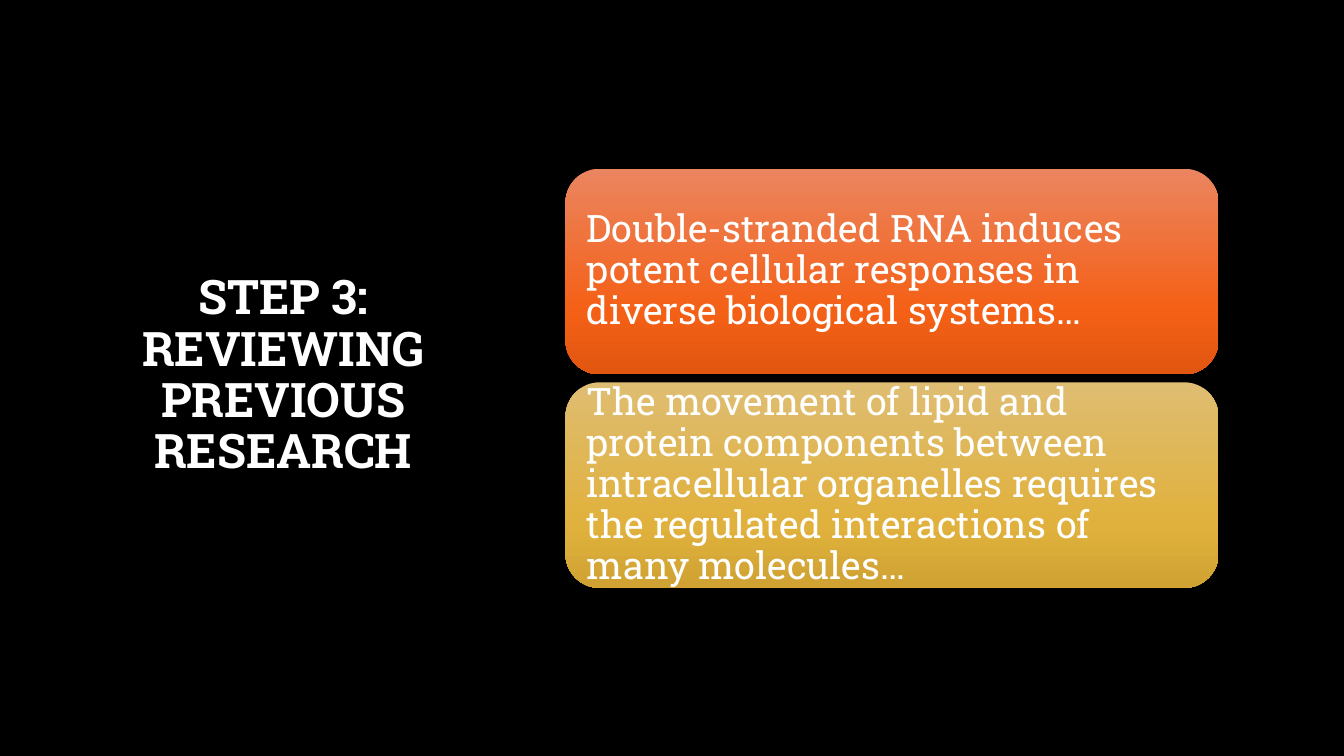
"""Build the Step 3 slide: a title beside two gradient cards of earlier research."""
from copy import deepcopy

from pptx import Presentation
from pptx.dml.color import RGBColor
from pptx.enum.shapes import MSO_SHAPE
from pptx.enum.text import MSO_ANCHOR, PP_ALIGN
from pptx.util import Pt

BLACK = RGBColor(0x00, 0x00, 0x00)
WHITE = RGBColor(0xFF, 0xFF, 0xFF)
ORANGES = [RGBColor(0xEB, 0x85, 0x60), RGBColor(0xF4, 0x60, 0x16), RGBColor(0xE1, 0x56, 0x10)]
GOLDS = [RGBColor(0xDF, 0xBD, 0x72), RGBColor(0xE0, 0xB1, 0x3C), RGBColor(0xCF, 0xA2, 0x33)]
STOPS = [0, 0.69, 1]

CARDS = [
    ("Double-stranded RNA induces potent cellular responses in diverse biological systems…", ORANGES),
    ("The movement of lipid and protein components between intracellular organelles "
     "requires the regulated interactions of many molecules…", GOLDS),
]
CARD_LEFT, CARD_TOP, CARD_WIDTH, CARD_HEIGHT, CARD_GAP = 403.9, 120.5, 466.5, 146.9, 5.7


def write_text(sp, text, size, bold=False, align=PP_ALIGN.LEFT, inset=7.2):
    tf = sp.text_frame
    tf.word_wrap = True
    tf.vertical_anchor = MSO_ANCHOR.MIDDLE
    tf.margin_left = tf.margin_right = tf.margin_top = tf.margin_bottom = Pt(inset)
    p = tf.paragraphs[0]
    p.alignment = align
    p.line_spacing = 0.9
    r = p.add_run()
    r.text = text
    r.font.name = "Roboto Slab"
    r.font.size = Pt(size)
    r.font.bold = bold
    r.font.color.rgb = WHITE


prs = Presentation()
prs.slide_width, prs.slide_height = Pt(960), Pt(540)
s = prs.slides.add_slide(prs.slide_layouts[6])
s.background.fill.solid()
s.background.fill.fore_color.rgb = BLACK

title = s.shapes.add_textbox(Pt(59), Pt(48.2), Pt(286.6), Pt(441.4))
write_text(title, "STEP 3: REVIEWING PREVIOUS RESEARCH", 34, bold=True, align=PP_ALIGN.CENTER)

for i, (text, colors) in enumerate(CARDS):
    top = CARD_TOP + i * (CARD_HEIGHT + CARD_GAP)
    sp = s.shapes.add_shape(MSO_SHAPE.ROUNDED_RECTANGLE, Pt(CARD_LEFT), Pt(top),
                            Pt(CARD_WIDTH), Pt(CARD_HEIGHT))
    sp.shadow.inherit = False
    sp.line.fill.background()
    sp.fill.gradient()
    sp.fill.gradient_angle = 270
    gs_lst = sp._element.spPr.gradFill.gsLst
    gs_lst.append(deepcopy(gs_lst[0]))
    for stop, position, color in zip(sp.fill.gradient_stops, STOPS, colors):
        stop.position = position
        stop.color.rgb = color
    write_text(sp, text, 27, inset=8)

prs.save("out.pptx")
